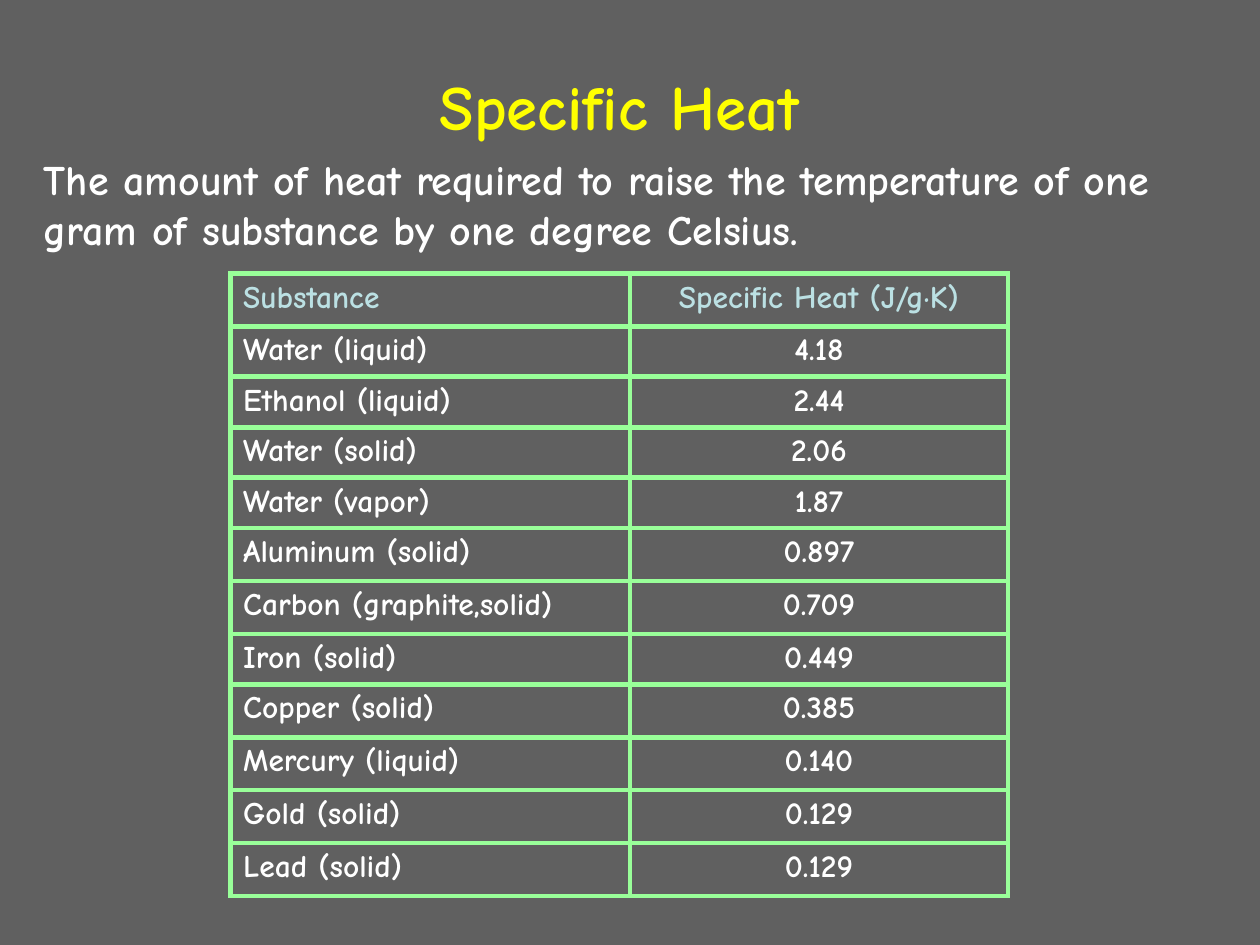
from pptx import Presentation
from pptx.dml.color import RGBColor
from pptx.enum.text import MSO_ANCHOR as Anchor, MSO_AUTO_SIZE as Fit, PP_ALIGN as Align
from pptx.oxml import parse_xml
from pptx.util import Inches, Pt
from lxml.etree import SubElement

NS = "http://schemas.openxmlformats.org/drawingml/2006/main"
FONT = "Comic Neue"
GREY, YELLOW, WHITE, BLUE, GREEN = "606060", "FFFF00", "FFFFFF", "BBE0E3", "99FF99"

# Content
TITLE = "Specific Heat"
MEANING = ("The amount of heat required to raise the temperature of one "
           "gram of substance by one degree Celsius.")
HEADS = ("Substance", "Specific Heat (J/g·K)")
HEATS = [
    ("Water (liquid)", "4.18"),
    ("Ethanol (liquid)", "2.44"),
    ("Water (solid)", "2.06"),
    ("Water (vapor)", "1.87"),
    ("Aluminum (solid)", "0.897"),
    ("Carbon (graphite,solid)", "0.709"),
    ("Iron (solid)", "0.449"),
    ("Copper (solid)", "0.385"),
    ("Mercury (liquid)", "0.140"),
    ("Gold (solid)", "0.129"),
    ("Lead (solid)", "0.129"),
]
WIDTHS = (3.17, 3)
HEIGHTS = (0.42, 0.33, 0.35, 0.37, 0.39, 0.42, 0.42, 0.4, 0.42, 0.42, 0.42, 0.42)


def color(code):
    return RGBColor.from_string(code)


def write(frame, text, size, code, align=Align.LEFT, before=0):
    """Fill a text frame; before is the space above in percent of a line."""
    par = frame.paragraphs[0]
    par.alignment = align
    if before:
        par.space_before = Pt(0)
        gap = par._p.pPr.find(f"{{{NS}}}spcBef")
        gap.remove(gap[0])
        SubElement(gap, f"{{{NS}}}spcPct", val=str(before * 1000))
    run = par.add_run()
    run.text = text
    font = run.font
    font.name, font.size, font.bold = FONT, Pt(size), True
    font.color.rgb = color(code)


def add_text(slide, box, *args, **opts):
    frame = slide.shapes.add_textbox(*map(Inches, box)).text_frame
    frame.word_wrap = True
    write(frame, *args, **opts)
    return frame


def frame_cell(cell, code, width):
    """Draw all four borders of a cell."""
    props = cell._tc.get_or_add_tcPr()
    for spot, side in enumerate("LRTB"):
        props.insert(spot, parse_xml(
            f'<a:ln{side} xmlns:a="{NS}" w="{Pt(width)}"><a:solidFill>'
            f'<a:srgbClr val="{code}"/></a:solidFill></a:ln{side}>'))


def add_grid(slide, rows):
    shape = slide.shapes.add_table(
        len(rows), len(WIDTHS), Inches(1.83), Inches(2.17),
        Inches(sum(WIDTHS)), Inches(sum(HEIGHTS)))
    table = shape.table
    table.first_row = table.horz_banding = False
    for col, width in zip(table.columns, WIDTHS):
        col.width = Inches(width)
    for row, height in zip(table.rows, HEIGHTS):
        row.height = Inches(height)
    for r, row in enumerate(rows):
        for c, text in enumerate(row):
            cell = table.cell(r, c)
            cell.fill.background()
            frame_cell(cell, GREEN, 3)
            write(cell.text_frame, text, 18, WHITE if r else BLUE,
                  Align.CENTER if c else Align.LEFT, before=20)


def main():
    deck = Presentation()
    deck.slide_width, deck.slide_height = Inches(10), Inches(7.5)
    slide = deck.slides.add_slide(deck.slide_layouts[6])
    back = slide.background.fill
    back.solid()
    back.fore_color.rgb = color(GREY)

    # Title and definition
    head = add_text(slide, (0.75, 0.42, 8.33, 0.83), TITLE, 36, YELLOW, Align.CENTER)
    head.vertical_anchor = Anchor.MIDDLE
    body = add_text(slide, (0.25, 1.17, 9.5, 0.9), MEANING, 24, WHITE, before=50)
    body.auto_size = Fit.SHAPE_TO_FIT_TEXT

    # Table of values
    add_grid(slide, [HEADS] + HEATS)
    deck.save("out.pptx")


if __name__ == "__main__":
    main()
